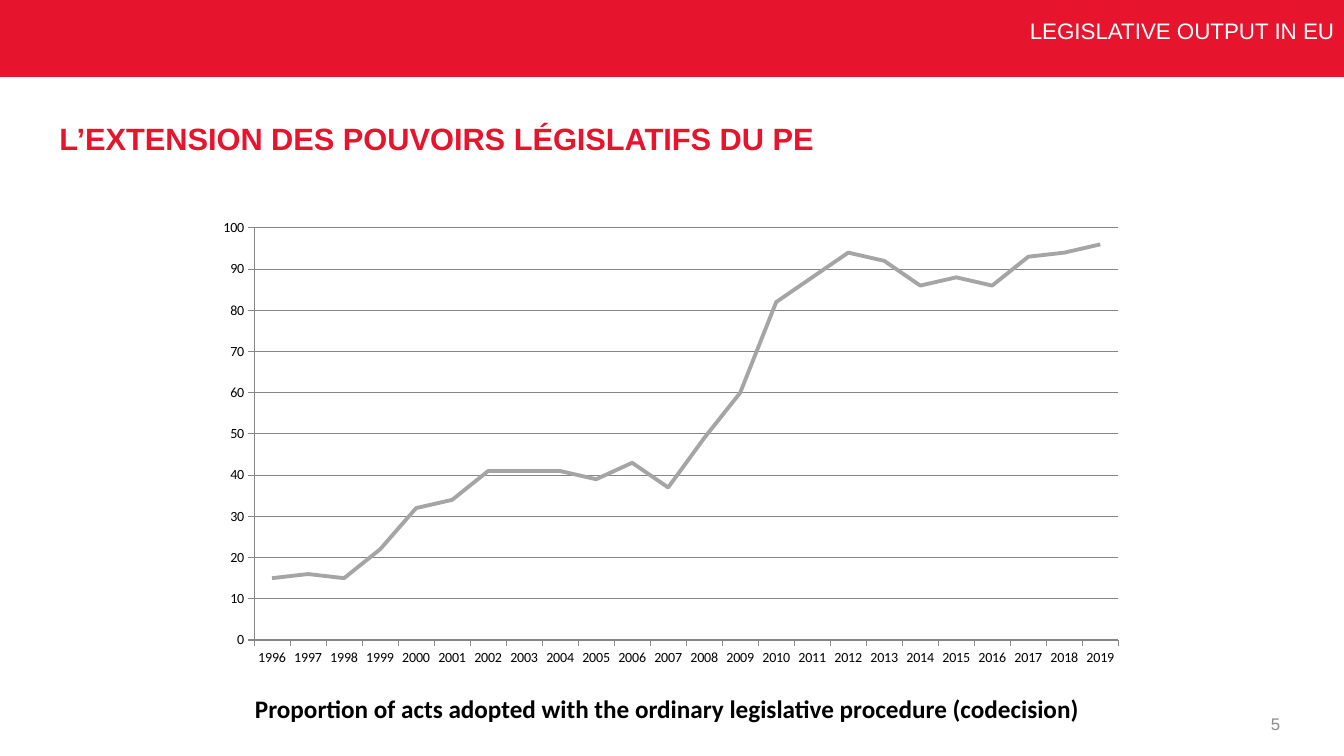
from dataclasses import dataclass

from lxml import etree
from pptx import Presentation
from pptx.chart.data import CategoryChartData
from pptx.dml.color import RGBColor
from pptx.enum.chart import XL_CHART_TYPE, XL_MARKER_STYLE, XL_TICK_MARK
from pptx.enum.shapes import MSO_SHAPE
from pptx.enum.text import MSO_ANCHOR, MSO_AUTO_SIZE, PP_ALIGN
from pptx.oxml import parse_xml
from pptx.oxml.ns import nsdecls, qn
from pptx.util import Pt

LINE = XL_CHART_TYPE.LINE
NO_MARKER = XL_MARKER_STYLE.NONE
TICK_OUTSIDE = XL_TICK_MARK.OUTSIDE
TICK_NONE = XL_TICK_MARK.NONE
RECTANGLE = MSO_SHAPE.RECTANGLE
TOP, MIDDLE = MSO_ANCHOR.TOP, MSO_ANCHOR.MIDDLE
NO_AUTOFIT = MSO_AUTO_SIZE.NONE
LEFT, RIGHT = PP_ALIGN.LEFT, PP_ALIGN.RIGHT

HEADER = "LEGISLATIVE OUTPUT IN EU"
TITLE = "L’EXTENSION DES POUVOIRS LÉGISLATIFS DU PE"
CAPTION = "Proportion of acts adopted with the ordinary legislative procedure (codecision)"
PAGE_NUMBER = "5"
SERIES_NAME = "Series 1"
FIRST_YEAR = 1996
SHARES = [15, 16, 15, 22, 32, 34, 41, 41, 41, 39, 43, 37,
          49, 60, 82, 88, 94, 92, 86, 88, 86, 93, 94, 96]

SLIDE_SIZE = (960, 540)
BAND_BOX = (0, 0, 960, 55)
HEADER_BOX = (253.4, 10.8, 707, 27.4)
TITLE_BOX = (35.3, 72.7, 887, 54.7)
CHART_BOX = (146.2, 151.2, 665.3, 331.9)
CAPTION_BOX = (175, 491.8, 607.7, 29)
NUMBER_BOX = (697.7, 502.6, 223.9, 28.8)
PLOT_LAYOUT = {"x": 0.053, "y": 0.035, "w": 0.928, "h": 0.887}


@dataclass(frozen=True)
class Theme:
    red: RGBColor = RGBColor(0xE6, 0x14, 0x2D)
    white: RGBColor = RGBColor(0xFF, 0xFF, 0xFF)
    black: RGBColor = RGBColor(0, 0, 0)
    muted: RGBColor = RGBColor(0x8C, 0x8C, 0x8C)
    axis: RGBColor = RGBColor(0x86, 0x86, 0x86)
    series: RGBColor = RGBColor(0xA5, 0xA5, 0xA5)
    sans: str = "Arial"
    chart_font: str = "Calibri"
    title_size: int = 22
    caption_size: int = 18
    header_size: int = 16
    number_size: int = 12
    chart_size: int = 10


THEME = Theme()


def points(box):
    return [Pt(value) for value in box]


def place(shape, box):
    shape.left, shape.top, shape.width, shape.height = points(box)


def write(shape, text, font_name, size, color, bold=False,
          align=LEFT, anchor=TOP, wrap=True, spacing=None):
    frame = shape.text_frame
    frame.text = text
    frame.word_wrap = wrap
    frame.auto_size = NO_AUTOFIT
    frame.vertical_anchor = anchor
    paragraph = frame.paragraphs[0]
    paragraph.alignment = align
    paragraph.space_before = Pt(0)
    if spacing:
        paragraph.line_spacing = spacing
    font = paragraph.runs[0].font
    font.name, font.size, font.bold = font_name, Pt(size), bold
    font.color.rgb = color


def add_band(slide):
    band = slide.shapes.add_shape(RECTANGLE, *points(BAND_BOX))
    band.shadow.inherit = False
    band.fill.solid()
    band.fill.fore_color.rgb = THEME.red
    band.line.fill.background()
    slide.shapes[0].element.addprevious(band.element)


def add_title(slide):
    title = slide.shapes.title
    place(title, TITLE_BOX)
    write(title, TITLE, THEME.sans, THEME.title_size, THEME.red,
          bold=True, anchor=MIDDLE, spacing=0.9)
    title.text_frame.margin_right = Pt(0)


def add_header(slide):
    header = slide.placeholders[1]
    place(header, HEADER_BOX)
    write(header, HEADER, THEME.sans, THEME.header_size, THEME.white,
          align=RIGHT, spacing=0.9)
    properties = header.text_frame.paragraphs[0]._p.get_or_add_pPr()
    properties.set("marL", "0")
    properties.set("indent", "0")
    etree.SubElement(properties, qn("a:buNone"))


def add_label(slide, box, text, *style, **options):
    label = slide.shapes.add_textbox(*points(box))
    write(label, text, *style, **options)


def add_chart(slide):
    data = CategoryChartData()
    data.categories = [str(FIRST_YEAR + offset) for offset in range(len(SHARES))]
    data.add_series(SERIES_NAME, SHARES)
    chart = slide.shapes.add_chart(LINE, *points(CHART_BOX), data).chart
    chart.has_legend = False
    chart.has_title = False
    chart.font.name = THEME.chart_font
    chart.font.size = Pt(THEME.chart_size)
    chart.font.color.rgb = THEME.black

    value_axis, category_axis = chart.value_axis, chart.category_axis
    value_axis.minimum_scale, value_axis.maximum_scale = 0, 100
    value_axis.major_unit = 10
    value_axis.has_major_gridlines = True
    category_axis.has_major_gridlines = False
    for axis in (value_axis, category_axis):
        axis.major_tick_mark = TICK_OUTSIDE
        axis.minor_tick_mark = TICK_NONE
    for part in (value_axis, category_axis, value_axis.major_gridlines):
        part.format.line.color.rgb = THEME.axis
        part.format.line.width = Pt(0.75)

    plot = chart.plots[0]
    plot.vary_by_categories = False
    series = plot.series[0]
    series.smooth = False
    series.marker.style = NO_MARKER
    series.format.line.color.rgb = THEME.series
    series.format.line.width = Pt(2.75)

    sizes = "".join(f'<c:{key} val="{value}"/>' for key, value in PLOT_LAYOUT.items())
    layout = parse_xml(
        f'<c:layout {nsdecls("c")}><c:manualLayout><c:layoutTarget val="inner"/>'
        f'<c:xMode val="edge"/><c:yMode val="edge"/>{sizes}'
        '</c:manualLayout></c:layout>')
    plot_area = chart.element.find(".//" + qn("c:plotArea"))
    for previous in plot_area.findall(qn("c:layout")):
        plot_area.remove(previous)
    plot_area.insert(0, layout)


def main():
    presentation = Presentation()
    presentation.slide_width, presentation.slide_height = points(SLIDE_SIZE)
    slide = presentation.slides.add_slide(presentation.slide_layouts[1])
    add_band(slide)
    add_title(slide)
    add_header(slide)
    add_label(slide, NUMBER_BOX, PAGE_NUMBER, THEME.sans, THEME.number_size,
              THEME.muted, align=RIGHT, anchor=MIDDLE)
    add_label(slide, CAPTION_BOX, CAPTION, THEME.chart_font, THEME.caption_size,
              THEME.black, bold=True, wrap=False)
    add_chart(slide)
    presentation.save("out.pptx")


if __name__ == "__main__":
    main()
